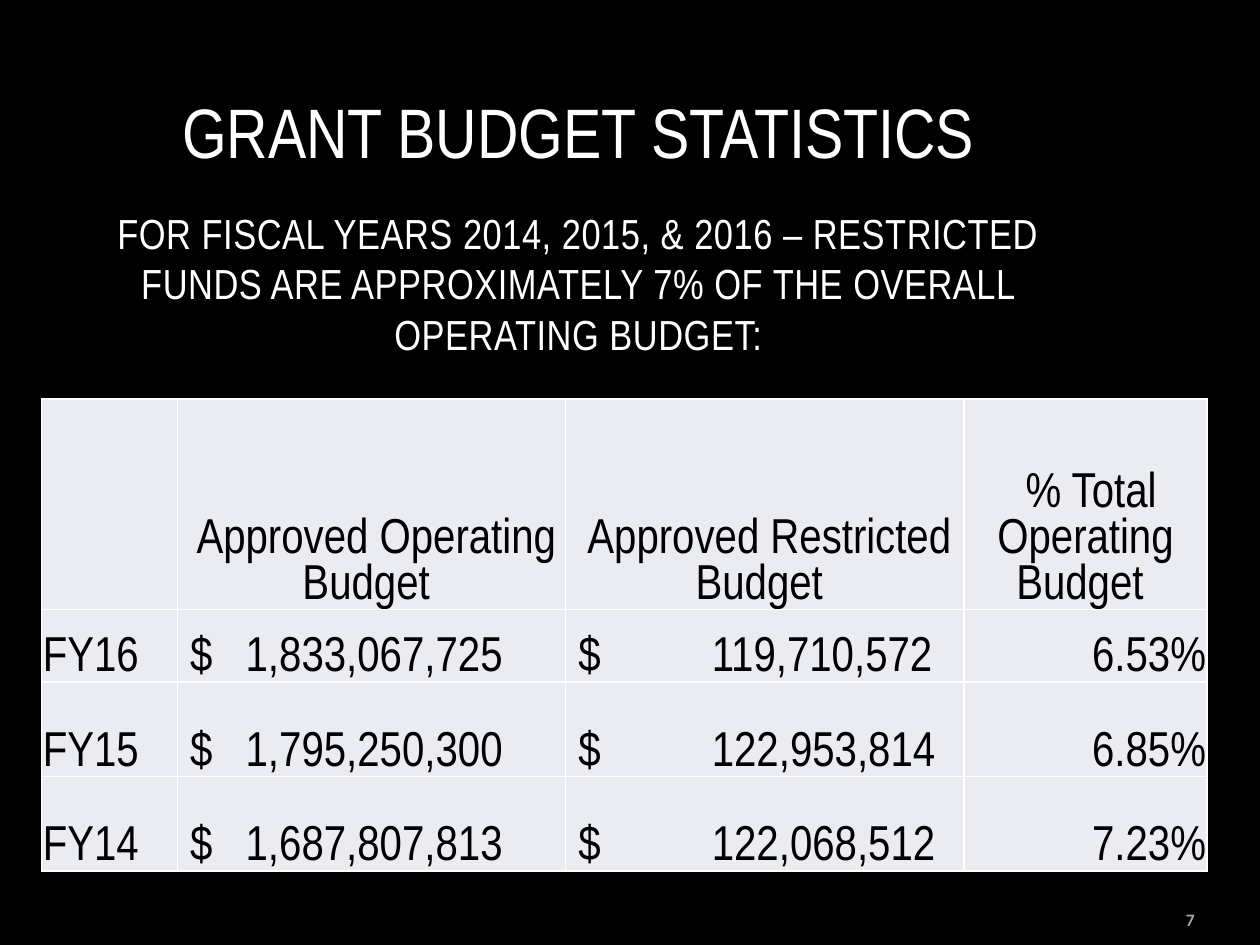
from lxml.etree import SubElement
from pptx import Presentation
from pptx.dml.color import RGBColor as Color
from pptx.enum.text import MSO_ANCHOR as Anchor, PP_ALIGN as Align
from pptx.oxml.ns import qn
from pptx.util import Inches, Pt

COLORS = {"black": "000000", "white": "FFFFFF", "cell": "EAECF2", "number": "A6A6A6"}

deck = Presentation()
deck.slide_width, deck.slide_height = Inches(10), Inches(7.5)
WIDTH, HEIGHT = deck.slide_width, deck.slide_height
slide = deck.slides.add_slide(deck.slide_layouts[6])
slide.background.fill.solid()
slide.background.fill.fore_color.rgb = Color.from_string(COLORS["black"])


def write(frame, text, size, color, align, font="Arial Narrow", bold=False):
    frame.word_wrap = True
    para = frame.paragraphs[0]
    para.text = text
    para.alignment = align
    for span in para.runs:
        span.font.size, span.font.name, span.font.bold = Pt(size), font, bold
        span.font.color.rgb = Color.from_string(COLORS[color])
    return para


def add_text(left, top, width, height, anchor, *style):
    box = slide.shapes.add_textbox(
        int(left * WIDTH), int(top * HEIGHT), int(width * WIDTH), int(height * HEIGHT)
    )
    box.text_frame.vertical_anchor = anchor
    return write(box.text_frame, *style)


add_text(0.039, 0.033, 0.84, 0.156, Anchor.BOTTOM,
         "GRANT BUDGET STATISTICS", 40, "white", Align.CENTER)
subtitle = add_text(
    0.039, 0.213, 0.84, 0.69, Anchor.TOP,
    "FOR FISCAL YEARS 2014, 2015, & 2016 – RESTRICTED FUNDS ARE "
    "APPROXIMATELY 7% OF THE OVERALL OPERATING BUDGET:",
    24, "white", Align.CENTER)
subtitle.runs[0].font._element.set("spc", "30")
add_text(0.862, 0.955, 0.096, 0.036, Anchor.MIDDLE,
         "7", 10, "number", Align.RIGHT, "Calibri", True)

rows = [
    ["", " Approved Operating Budget ", " Approved Restricted Budget ", " % Total Operating Budget "],
    ["FY16", "$\t1,833,067,725", "$\t119,710,572", "6.53%"],
    ["FY15", "$\t1,795,250,300", "$\t122,953,814", "6.85%"],
    ["FY14", "$\t1,687,807,813", "$\t122,068,512", "7.23%"],
]
column_shares = [0.108, 0.308, 0.316, 0.193]
row_shares = [0.223, 0.077, 0.1, 0.1]
column_aligns = [Align.LEFT, Align.LEFT, Align.LEFT, Align.RIGHT]
amount_tabs = {1: 0.44, 2: 1.06}

table = slide.shapes.add_table(
    len(rows), len(column_shares), int(0.033 * WIDTH), int(0.422 * HEIGHT),
    int(sum(column_shares) * WIDTH), int(sum(row_shares) * HEIGHT)
).table
table.first_row = table.horz_banding = False
for column, share in zip(table.columns, column_shares):
    column.width = int(share * WIDTH)
for row, share in zip(table.rows, row_shares):
    row.height = int(share * HEIGHT)

for row_index, texts in enumerate(rows):
    for column_index, text in enumerate(texts):
        cell = table.cell(row_index, column_index)
        is_amount = "\t" in text
        cell.margin_left = Inches(0.1 if is_amount else 0.01)
        cell.margin_top = cell.margin_right = Inches(0.01)
        cell.margin_bottom = 0
        cell.vertical_anchor = Anchor.BOTTOM
        align = column_aligns[column_index] if row_index else Align.CENTER
        para = write(cell.text_frame, text, 28, "black", align)
        if is_amount:
            tabs = SubElement(para._p.get_or_add_pPr(), qn("a:tabLst"))
            SubElement(tabs, qn("a:tab"), pos=str(Inches(amount_tabs[column_index])), algn="l")
        properties = cell._tc.get_or_add_tcPr()
        for side in ("lnL", "lnR", "lnT", "lnB"):
            border = SubElement(properties, qn(f"a:{side}"), w=str(Pt(1)))
            fill = SubElement(border, qn("a:solidFill"))
            SubElement(fill, qn("a:srgbClr"), val=COLORS["white"])
        cell.fill.solid()
        cell.fill.fore_color.rgb = Color.from_string(COLORS["cell"])

deck.save("out.pptx")
